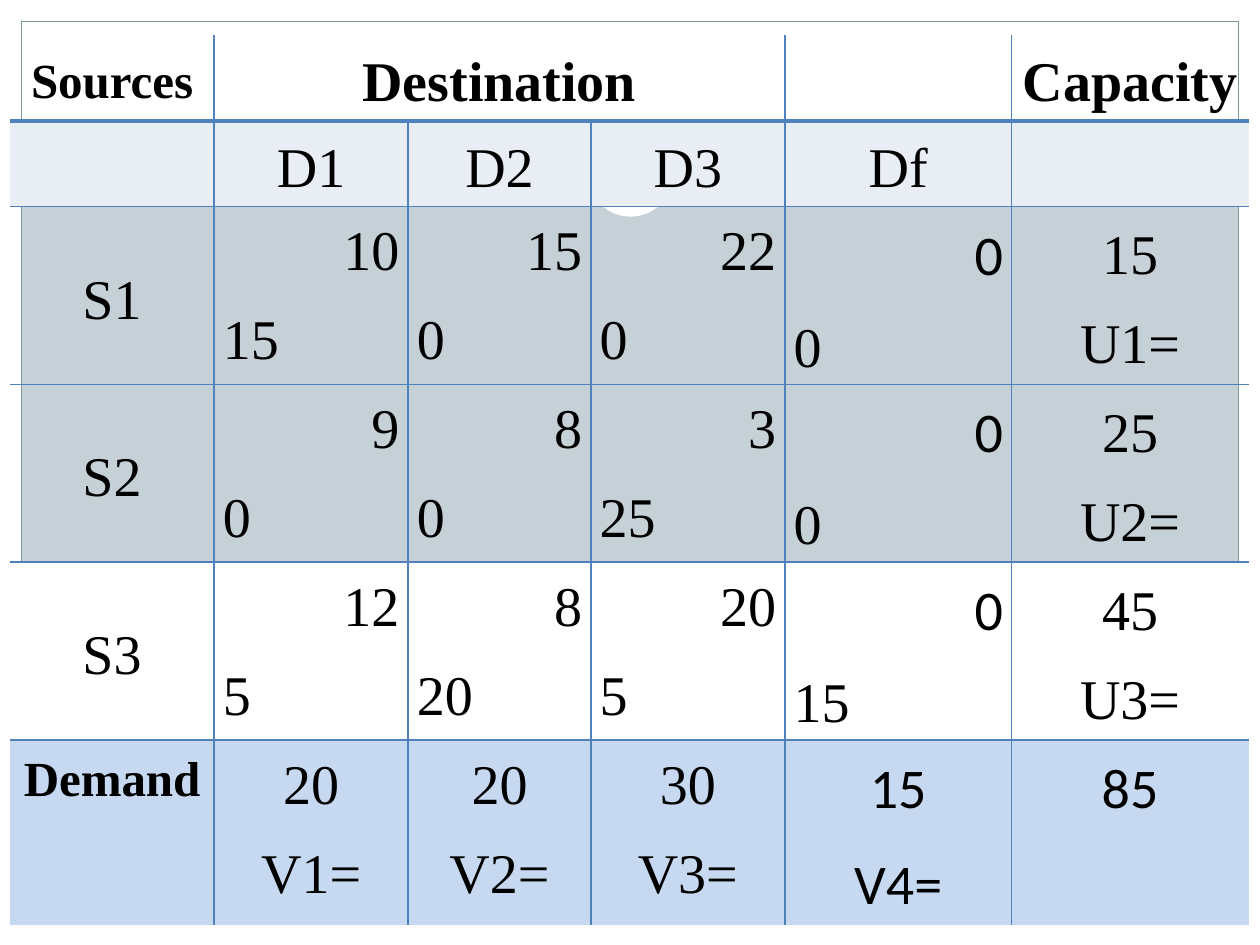
import pptx
import pptx.dml.color
import pptx.enum.shapes
import pptx.enum.text
import pptx.oxml
import pptx.oxml.ns
import pptx.util

Inches = pptx.util.Inches
Pt = pptx.util.Pt
SHAPE = pptx.enum.shapes.MSO_SHAPE
ALIGN = pptx.enum.text.PP_ALIGN
ANCHOR = pptx.enum.text.MSO_ANCHOR

SERIF, SANS = "Times New Roman", "Calibri"
GREY, WHITE, BLUE = "C5D1D7", "FFFFFF", "4F81BD"
COLS = [1.62, 1.54, 1.45, 1.54, 1.8, 1.88]
ROWS = [0.68, 0.68, 1.4, 1.4, 1.4, 0.94]
FILLS = [None, "E9EDF4", None, None, WHITE, "C6D9F1"]
SHADED = {(2, 1), (2, 4), (3, 3)}
LAST = 5

# Each source: its (cost, amount) pairs for D1, D2, D3, Df, then its capacity
SOURCES = [
    ([("10", "15"), ("15", "0"), ("22", "0"), ("0", "0")], "15"),
    ([("9", "0"), ("8", "0"), ("3", "25"), ("0", "0")], "25"),
    ([("12", "5"), ("8", "20"), ("20", "5"), ("0", "15")], "45"),
]
DEMAND = ["20", "20", "30", "15"]


def color(code):
    return pptx.dml.color.RGBColor.from_string(code)


def plate(slide, kind, box, fill=None, line=None):
    """Add a plain backdrop shape."""
    shape = slide.shapes.add_shape(kind, *map(Inches, box))
    shape.shadow.inherit = False
    if fill:
        shape.fill.solid()
        shape.fill.fore_color.rgb = color(fill)
    else:
        shape.fill.background()
    if line:
        shape.line.color.rgb = color(line)
        shape.line.width = Pt(0.75)
    else:
        shape.line.fill.background()


def edge(cell, side, width):
    """Set one cell border; a width of 0 means no line."""
    paint = f'<a:solidFill><a:srgbClr val="{BLUE}"/></a:solidFill>'
    cell._tc.get_or_add_tcPr().append(pptx.oxml.parse_xml(
        f'<a:ln{side} {pptx.oxml.ns.nsdecls("a")} w="{int(Pt(width))}">'
        f'{paint if width else "<a:noFill/>"}</a:ln{side}>'))


def style(cell, row, col):
    cell.margin_left = cell.margin_right = Inches(0.07)
    cell.margin_top = cell.margin_bottom = Inches(0.04)
    edge(cell, "L", 1 if col > 0 else 0)
    edge(cell, "R", 1 if col < LAST else 0)
    edge(cell, "T", {0: 0, 1: 2.25}.get(row, 1))
    edge(cell, "B", {0: 2.25, LAST: 0}.get(row, 1))
    fill = GREY if (row, col) in SHADED else FILLS[row]
    if fill:
        cell.fill.solid()
        cell.fill.fore_color.rgb = color(fill)
    else:
        cell.fill.background()


def write(cell, *lines, size=32, bold=False, fonts=(SERIF, SERIF),
          aligns=(ALIGN.CENTER, ALIGN.CENTER), anchor=ANCHOR.MIDDLE):
    """Write one paragraph per line of text."""
    cell.vertical_anchor = anchor
    frame = cell.text_frame
    for i, (text, name, align) in enumerate(zip(lines, fonts, aligns)):
        para = frame.add_paragraph() if i else frame.paragraphs[0]
        para.alignment = align
        para.line_spacing = 1.15
        para.space_after = Pt(10)
        run = para.add_run()
        run.text = text
        run.font.name = name
        run.font.size = Pt(size)
        run.font.bold = bold
        run.font.color.rgb = color("000000")


def backdrop(slide):
    slide.background.fill.solid()
    slide.background.fill.fore_color.rgb = color(GREY)
    for box in [(0, 7.33, 10, 0.17), (0, 0, 10, 1.52),
                (0, 0, 0.17, 7.5), (9.83, 0, 0.17, 7.5)]:
        plate(slide, SHAPE.RECTANGLE, box, fill=WHITE)
    plate(slide, SHAPE.RECTANGLE, (0.17, 0.17, 9.66, 7.16), line="7C999A")
    plate(slide, SHAPE.OVAL, (4.67, 1.05, 0.67, 0.67), fill=WHITE)


def grid(slide):
    """Add the styled, empty table."""
    box = (0.08, 0.28, sum(COLS), sum(ROWS))
    table = slide.shapes.add_table(
        len(ROWS), len(COLS), *map(Inches, box)).table
    table.first_row = table.horz_banding = False
    for col, width in zip(table.columns, COLS):
        col.width = Inches(width)
    for row, height in zip(table.rows, ROWS):
        row.height = Inches(height)
    for row in range(len(ROWS)):
        for col in range(len(COLS)):
            style(table.cell(row, col), row, col)
    table.cell(0, 1).merge(table.cell(0, 3))
    return table


def fill_in(table):
    cell = table.cell
    write(cell(0, 0), "Sources", size=28, bold=True)
    write(cell(0, 1), "Destination", bold=True)
    write(cell(0, LAST), "Capacity", bold=True)
    for col, name in enumerate(["D1", "D2", "D3", "Df"], 1):
        write(cell(1, col), name)

    for num, (pairs, total) in enumerate(SOURCES, 1):
        row = num + 1
        write(cell(row, 0), f"S{num}")
        for col, pair in enumerate(pairs, 1):
            write(cell(row, col), *pair, anchor=ANCHOR.TOP,
                  fonts=(SANS if col == 4 else SERIF, SERIF),
                  aligns=(ALIGN.RIGHT, ALIGN.LEFT))
        write(cell(row, LAST), total, f"U{num}=")

    write(cell(LAST, 0), "Demand", size=28, bold=True, anchor=ANCHOR.TOP)
    for col, need in enumerate(DEMAND, 1):
        name = SANS if col == 4 else SERIF
        write(cell(LAST, col), need, f"V{col}=", fonts=(name, name),
              anchor=ANCHOR.TOP)
    write(cell(LAST, LAST), "85", fonts=(SANS,), anchor=ANCHOR.TOP)


def main():
    deck = pptx.Presentation()
    deck.slide_width, deck.slide_height = Inches(10), Inches(7.5)
    slide = deck.slides.add_slide(deck.slide_layouts[6])
    backdrop(slide)
    fill_in(grid(slide))
    deck.save("out.pptx")


if __name__ == "__main__":
    main()
